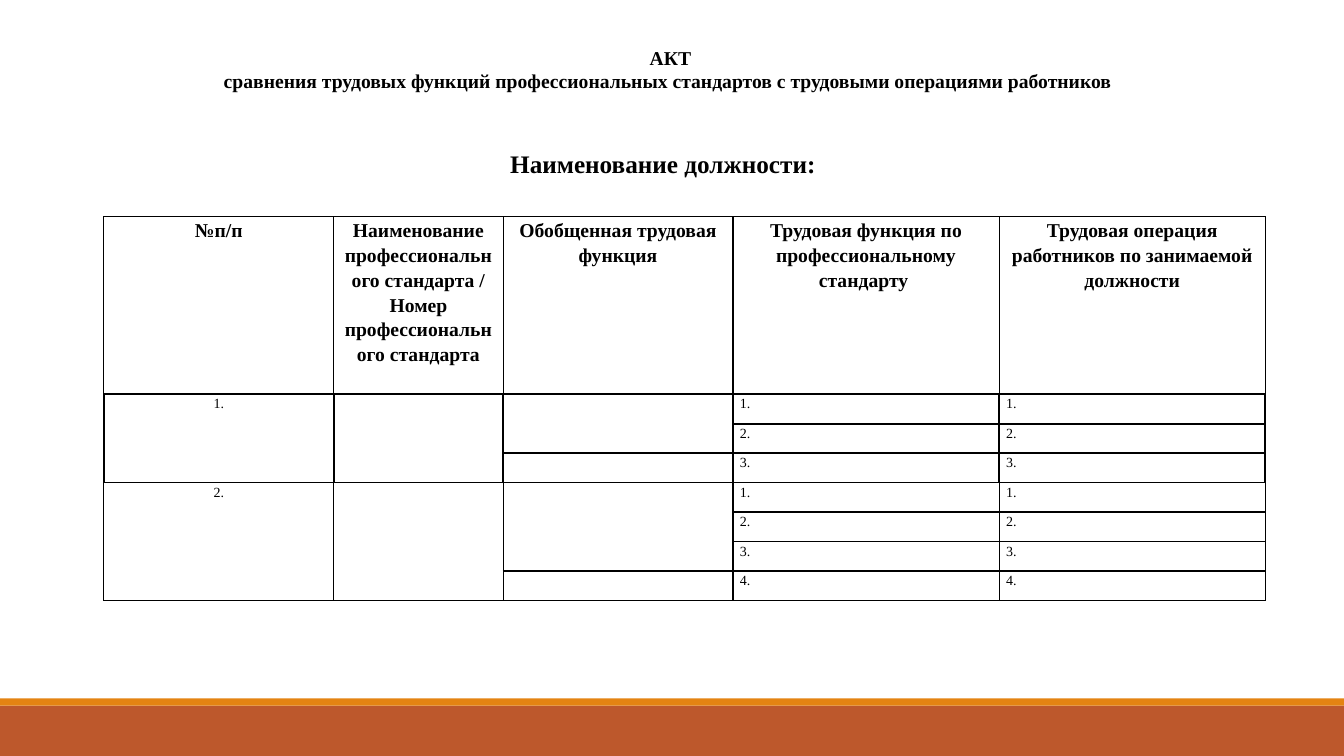
"""Build the slide with the act comparing labour functions and job operations."""
from dataclasses import dataclass

from lxml.etree import SubElement
from pptx import Presentation
from pptx.dml.color import RGBColor
from pptx.enum.shapes import MSO_SHAPE
from pptx.enum.text import MSO_ANCHOR, PP_ALIGN
from pptx.oxml.ns import qn
from pptx.util import Inches, Pt

COLORS = {"text": "000000", "border": "000000", "footer": "BD582C", "stripe": "E48312"}
FONT = "Times New Roman"
THIN, THICK = 1, 1.5
COLUMN_WIDTHS = [2.28, 1.68, 2.28, 2.64, 2.64]
HEADER_HEIGHT, TABLE_HEIGHT = 1.76, 3.81
HEADERS = [
    "№п/п",
    "Наименование профессионального стандарта / Номер профессионального стандарта",
    "Обобщенная трудовая функция",
    "Трудовая функция по профессиональному стандарту ",
    "Трудовая операция работников по занимаемой должности",
]


@dataclass(frozen=True)
class Band:
    top: float
    height: float
    color: str


@dataclass(frozen=True)
class Heading:
    left: float
    top: float
    width: float
    height: float
    lines: tuple[str, ...]
    size: int
    anchor: MSO_ANCHOR


@dataclass(frozen=True)
class Position:
    number: str
    first_row: int
    functions: int
    border: float


BANDS = [Band(7, 0.5, "footer"), Band(6.93, 0.07, "stripe")]
HEADINGS = [
    Heading(0.12, 0.4, 13.06, 0.57, (
        "АКТ",
        "сравнения трудовых функций профессиональных стандартов с трудовыми операциями работников ",
    ), 14, MSO_ANCHOR.MIDDLE),
    Heading(3.24, 1.42, 6.67, 0.4, ("Наименование должности:",), 18, MSO_ANCHOR.TOP),
]
POSITIONS = [Position("1.", 1, 3, THICK), Position("2.", 4, 4, THIN)]


def write(frame, *lines: str, size: int = 10, bold: bool = False,
          align: PP_ALIGN = PP_ALIGN.CENTER, spacing: float = 1.0) -> None:
    frame.word_wrap = True
    for index, line in enumerate(lines):
        paragraph = frame.add_paragraph() if index else frame.paragraphs[0]
        paragraph.alignment = align
        paragraph.line_spacing = spacing
        if not line:
            SubElement(paragraph._p, qn("a:endParaRPr"), sz=str(size * 100))
            continue
        run = paragraph.add_run()
        run.text = line
        run.font.name = FONT
        run.font.size = Pt(size)
        run.font.bold = bold
        run.font.color.rgb = RGBColor.from_string(COLORS["text"])


def draw_band(slide, band: Band, width: int) -> None:
    bar = slide.shapes.add_shape(MSO_SHAPE.RECTANGLE, 0, Inches(band.top), width, Inches(band.height))
    bar.shadow.inherit = False
    bar.fill.solid()
    bar.fill.fore_color.rgb = RGBColor.from_string(COLORS[band.color])
    bar.line.fill.background()


def draw_heading(slide, heading: Heading) -> None:
    box = slide.shapes.add_textbox(Inches(heading.left), Inches(heading.top),
                                   Inches(heading.width), Inches(heading.height))
    box.text_frame.vertical_anchor = heading.anchor
    write(box.text_frame, *heading.lines, size=heading.size, bold=True)


def set_borders(cell, top: float, bottom: float, sides: float) -> None:
    properties = cell._tc.get_or_add_tcPr()
    edges = {"a:lnL": sides, "a:lnR": sides, "a:lnT": top, "a:lnB": bottom}
    for index, (edge, width) in enumerate(edges.items()):
        line = SubElement(properties, qn(edge), w=str(Pt(width)))
        fill = SubElement(line, qn("a:solidFill"))
        SubElement(fill, qn("a:srgbClr"), val=COLORS["border"])
        properties.insert(index, line)


def fill_cell(cell, text: str, top: float, bottom: float, sides: float, **text_format) -> None:
    cell.fill.background()
    cell.margin_left = cell.margin_right = Inches(0.07)
    cell.margin_top = cell.margin_bottom = 0
    write(cell.text_frame, text, spacing=1.15, **text_format)
    set_borders(cell, top, bottom, sides)


def fill_position(table, position: Position) -> None:
    last_row = position.first_row + position.functions - 1
    for index in range(position.functions):
        row = position.first_row + index
        top = position.border if index else THICK
        item = f"{index + 1}."
        texts = ["" if index else position.number, "", "", item, item]
        for column, text in enumerate(texts):
            fill_cell(table.cell(row, column), text, top, position.border, position.border,
                      align=PP_ALIGN.LEFT if column > 2 else PP_ALIGN.CENTER)
    for column, end in enumerate([last_row, last_row, last_row - 1]):
        table.cell(position.first_row, column).merge(table.cell(end, column))


def draw_table(slide) -> None:
    body_rows = sum(position.functions for position in POSITIONS)
    table = slide.shapes.add_table(body_rows + 1, len(HEADERS), Inches(1.03), Inches(2.15),
                                   Inches(sum(COLUMN_WIDTHS)), Inches(TABLE_HEIGHT)).table
    table.first_row = table.horz_banding = False
    for column, width in zip(table.columns, COLUMN_WIDTHS):
        column.width = Inches(width)
    for index, row in enumerate(table.rows):
        row.height = Inches((TABLE_HEIGHT - HEADER_HEIGHT) / body_rows if index else HEADER_HEIGHT)
    for column, header in enumerate(HEADERS):
        fill_cell(table.cell(0, column), header, THIN, THICK, THIN, size=14, bold=True)
    for position in POSITIONS:
        fill_position(table, position)


def main() -> None:
    deck = Presentation()
    deck.slide_width, deck.slide_height = Inches(13.33), Inches(7.5)
    slide = deck.slides.add_slide(deck.slide_layouts[6])
    for band in BANDS:
        draw_band(slide, band, deck.slide_width)
    for heading in HEADINGS:
        draw_heading(slide, heading)
    draw_table(slide)
    deck.save("out.pptx")


if __name__ == "__main__":
    main()
